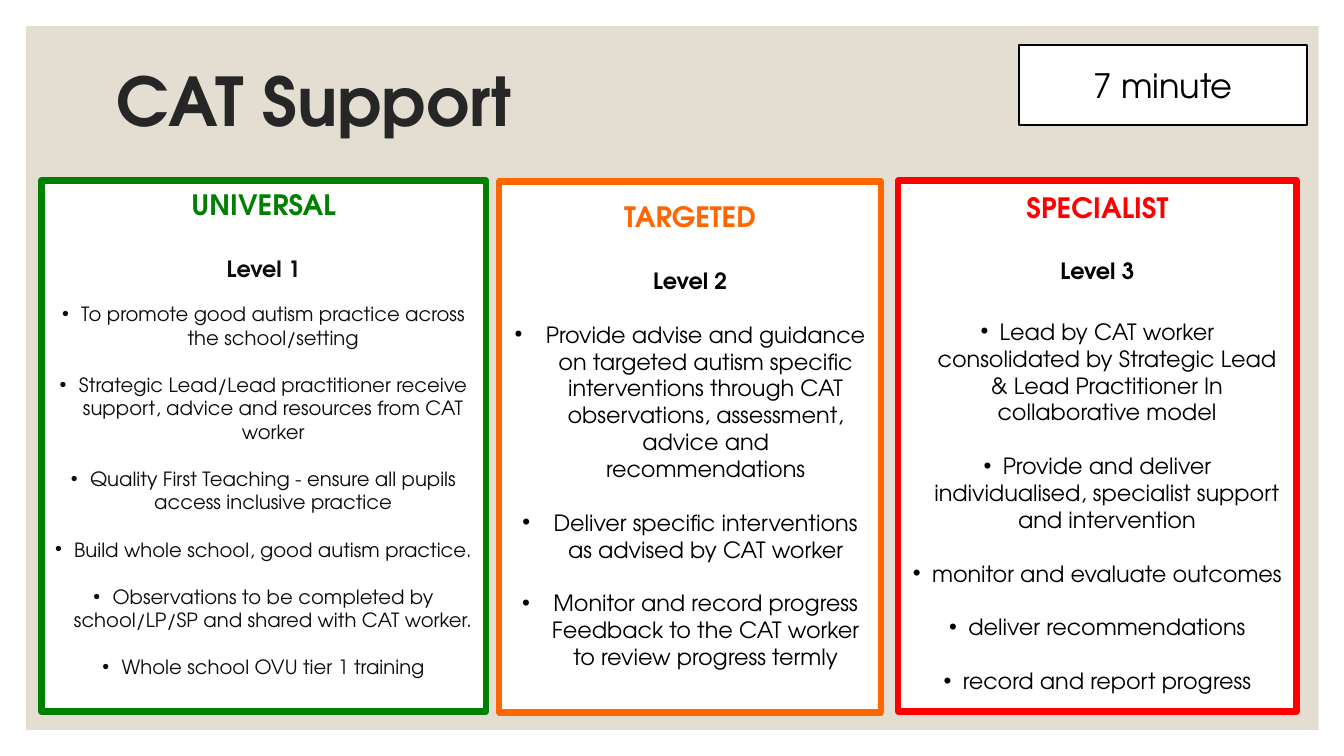
from lxml.etree import SubElement
from pptx import Presentation
from pptx.dml.color import RGBColor
from pptx.enum.shapes import MSO_SHAPE
from pptx.enum.text import MSO_ANCHOR, PP_ALIGN
from pptx.oxml.ns import qn
from pptx.util import Inches, Pt

FONT = "TeX Gyre Adventor"
INK = "000000"
WHITE = "FFFFFF"
SAND = "E3DED1"

# name, colour, level, ink, left, top, width, top inset, gap, text size, indent, points
CARDS = [
    ("UNIVERSAL", "008000", "Level 1", "0D0D0D", 3.08, 23.87, 33.08, 5.3, 14.4, 14, 0.19, [
        "To promote good autism practice across the school/setting",
        "Strategic Lead/Lead practitioner receive support, advice and resources from CAT worker",
        "Quality First Teaching - ensure all pupils access inclusive practice",
        "Build whole school, good autism practice.",
        "Observations to be completed by school/LP/SP and shared with CAT worker.",
        "Whole school OVU tier 1 training",
    ]),
    ("TARGETED", "FF6600", "Level 2", INK, 37.13, 24, 28.43, 13.2, 19.2, 16, 0.31, [
        "Provide advise and guidance on targeted autism specific interventions through CAT "
        "observations, assessment, advice and recommendations",
        "Deliver specific interventions as advised by CAT worker",
        "Monitor and record progress Feedback to the CAT worker to review progress termly",
    ]),
    ("SPECIALIST", "FF0000", "Level 3", INK, 66.84, 23.87, 29.63, 7, 24, 16, 0.19, [
        "Lead by CAT worker consolidated by Strategic Lead & Lead Practitioner In "
        "collaborative model",
        "Provide and deliver individualised, specialist support and intervention",
        "monitor and evaluate outcomes",
        "deliver recommendations",
        "record and report progress",
    ]),
]


def paint(code):
    return RGBColor.from_string(code)


class Board:
    """Places elements on one slide; lengths are percent of its width and height."""

    def __init__(self, deck):
        self.deck = deck
        self.slide = deck.slides.add_slide(deck.slide_layouts[6])

    def place(self, left, top, width, height):
        wide, high = self.deck.slide_width / 100, self.deck.slide_height / 100
        return [round(n) for n in (left * wide, top * high, width * wide, height * high)]

    def panel(self, area, fill, edge=None, weight=0):
        box = self.slide.shapes.add_shape(MSO_SHAPE.RECTANGLE, *self.place(*area))
        box.shadow.inherit = False
        box.fill.solid()
        box.fill.fore_color.rgb = paint(fill)
        if edge:
            box.line.color.rgb = paint(edge)
            box.line.width = Pt(weight)
        else:
            box.line.fill.background()
        box.text_frame.word_wrap = True
        return box

    def style(self, para, size, ink, bold=False, align=PP_ALIGN.CENTER, gap=0):
        """Formats a paragraph; gap is the space before it in points."""
        para.alignment = align
        para.space_before = Pt(gap)
        for run in para.runs:
            font = run.font
            font.name, font.size, font.bold = FONT, Pt(size), bold
            font.color.rgb = paint(ink)

    def bullet(self, para, indent):
        props = para._p.get_or_add_pPr()
        props.set("marL", str(Inches(indent)))
        props.set("indent", str(-Inches(indent)))
        SubElement(props, qn("a:buFont")).set("typeface", "Arial")
        SubElement(props, qn("a:buChar")).set("char", "•")

    def title(self, area, text):
        frame = self.slide.shapes.add_textbox(*self.place(*area)).text_frame
        frame.word_wrap = True
        frame.vertical_anchor = MSO_ANCHOR.MIDDLE
        frame.text = text
        para = frame.paragraphs[0]
        self.style(para, 48, "262626", True, PP_ALIGN.LEFT)
        para.line_spacing = 0.9

    def badge(self, area, text):
        frame = self.panel(area, WHITE, INK, 1.5).text_frame
        frame.vertical_anchor = MSO_ANCHOR.MIDDLE
        frame.text = text
        self.style(frame.paragraphs[0], 24, INK)

    def card(self, name, hue, level, ink, left, top, width, inset, gap, size, indent, points):
        frame = self.panel((left, top, width, 70.27), WHITE, hue, 4.5).text_frame
        frame.vertical_anchor = MSO_ANCHOR.TOP
        frame.margin_top = Pt(inset)
        frame.text = "\n".join([name, level, *points])
        head, sub, *items = frame.paragraphs
        self.style(head, 20, hue, True)
        self.style(sub, 16, ink, True, gap=24)
        for spot, item in enumerate(items):
            self.style(item, size, ink, gap=size * 1.2 if spot else gap)
            self.bullet(item, indent)


def main():
    deck = Presentation()
    deck.slide_width, deck.slide_height = Inches(13.33), Inches(7.5)
    board = Board(deck)
    board.panel((1.95, 3.47, 96.17, 93.07), SAND)
    board.title((7.95, 3.87, 82.52, 20), "CAT Support")
    for card in CARDS:
        board.card(*card)
    board.badge((75.84, 6, 21.38, 10.53), "7 minute")
    deck.save("out.pptx")


if __name__ == "__main__":
    main()
